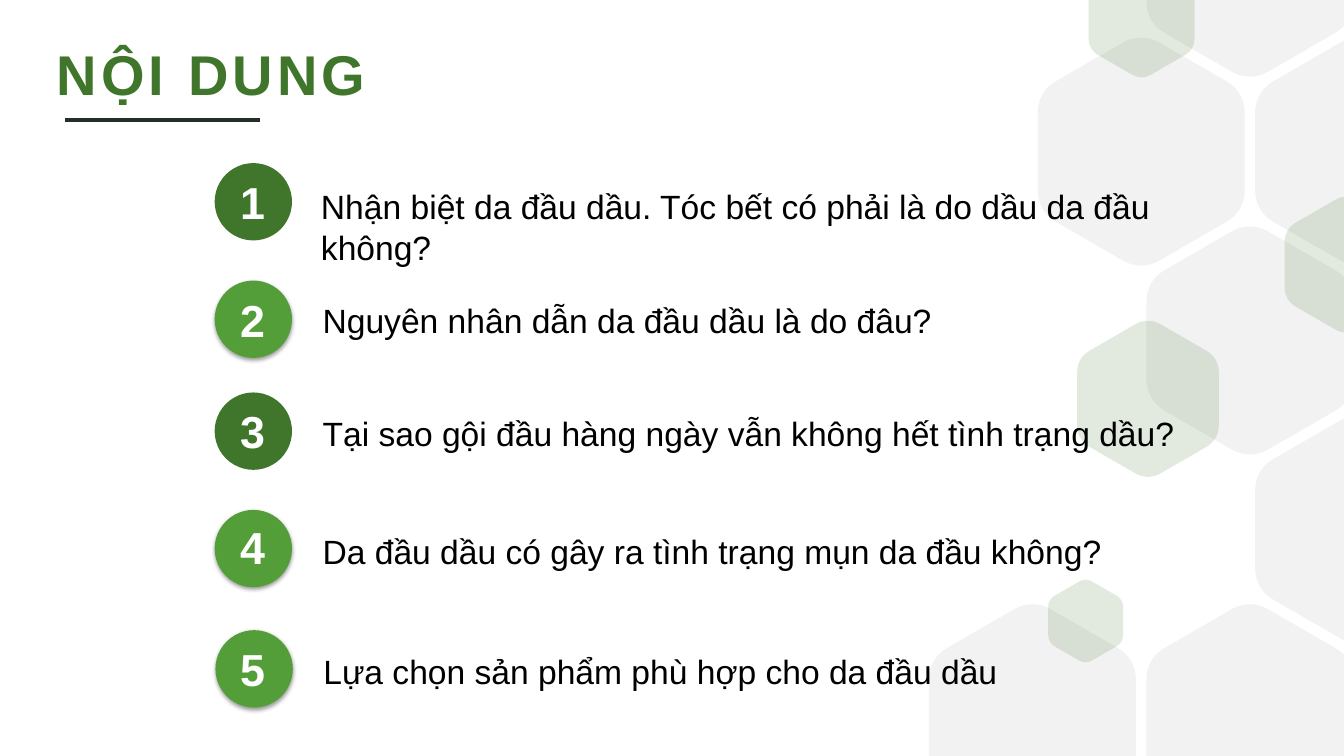
import math

import pptx
import pptx.dml.color
import pptx.enum.shapes
import pptx.enum.text
import pptx.oxml
import pptx.oxml.ns
import pptx.util

Cm = pptx.util.Cm
Pt = pptx.util.Pt
RGBColor = pptx.dml.color.RGBColor
qn = pptx.oxml.ns.qn

DARK_GREEN = RGBColor(0x3F, 0x76, 0x2B)
GREEN = RGBColor(0x54, 0x9E, 0x39)
SLATE = RGBColor(0x22, 0x30, 0x28)
GREY = RGBColor(0xF2, 0xF2, 0xF2)
WHITE = RGBColor(0xFF, 0xFF, 0xFF)
BLACK = RGBColor(0x00, 0x00, 0x00)

WIDTH, HEIGHT = 33.87, 19.05
CORNER = [(0.17, 1.06), (0.06, 1.12), (-0.06, 1.12), (-0.17, 1.06)]
DRAWING_NS = "http://schemas.openxmlformats.org/drawingml/2006/main"

GREY_CELLS = [(0, 4), (2, 4), (3, 1), (2, 0), (2, 2), (1, 1), (3, 3)]
GREEN_HEXAGONS = [
    (33.93, 6.67, 1.55),
    (27.36, 15.65, 0.94),
    (28.77, 0.48, 1.33),
    (28.93, 10.05, 1.78),
]
AGENDA = [
    ("Nhận biệt da đầu dầu. Tóc bết có phải là do dầu da đầu không?",
     5.41, 4.11, DARK_GREEN, 4.27, 7.84, 4.57, 2.31, None),
    ("Nguyên nhân dẫn da đầu dầu là do đâu?",
     5.41, 7.07, GREEN, 7.24, 7.88, 7.43, 1.27, None),
    ("Tại sao gội đầu hàng ngày vẫn không hết tình trạng dầu?",
     5.41, 9.89, DARK_GREEN, 10.06, 7.88, 10.29, 1.27, None),
    ("Da đầu dầu có gây ra tình trạng mụn da đầu không?",
     5.41, 12.85, GREEN, 12.98, 7.88, 12.94, 1.45, 1.3),
    ("Lựa chọn sản phẩm phù hợp cho da đầu dầu",
     5.43, 15.88, GREEN, 16.05, 7.9, 15.98, 1.45, 1.3),
]


def hexagon_corners(center_x, center_y, radius):
    """Return the Bezier points of each rounded corner, clockwise from the bottom."""
    corners = []
    for index in range(6):
        cosine, sine = math.cos(index * math.pi / 3), math.sin(index * math.pi / 3)
        corners.append([(center_x + radius * (x * cosine - y * sine),
                         center_y + radius * (x * sine + y * cosine)) for x, y in CORNER])
    return corners


class SlideBuilder:
    """Hold the font and the current slide, and add its elements."""

    def __init__(self, slide, font_name):
        self.shapes = slide.shapes
        self.font_name = font_name

    def paint(self, shape, color):
        shape.shadow.inherit = False
        shape.fill.solid()
        shape.fill.fore_color.rgb = color
        shape.line.fill.background()

    def hexagon(self, center_x, center_y, radius, color, opacity=None):
        corners = hexagon_corners(center_x, center_y, radius)
        inside = [all(0 <= y <= HEIGHT for x, y in corner) for corner in corners]
        first = next((i for i in range(6) if inside[i] and not inside[i - 1]), 0)
        order = [(first + i) % 6 for i in range(6)]
        points = [point for i in order if inside[i] for point in corners[i]]
        cut = not all(inside)
        if cut:
            edge = 0 if center_y < HEIGHT / 2 else HEIGHT
            points = [(points[0][0], edge), *points, (points[-1][0], edge)]
        points = [(Cm(x), Cm(y)) for x, y in points]
        builder = self.shapes.build_freeform(*points[0])
        builder.add_line_segments(points[1:], close=True)
        shape = builder.convert_to_shape()
        self.round_corners(shape, int(cut), sum(inside))
        self.paint(shape, color)
        if opacity:
            color_element = shape._element.spPr.find(qn("a:solidFill"))[0]
            color_element.append(pptx.oxml.parse_xml(
                f'<a:alpha xmlns:a="{DRAWING_NS}" val="{opacity * 1000}"/>'))

    def round_corners(self, shape, start, count):
        segments = list(shape._element.iter(qn("a:lnTo")))
        for index in range(start, start + 4 * count, 4):
            curve = pptx.oxml.parse_xml(f'<a:cubicBezTo xmlns:a="{DRAWING_NS}"/>')
            segments[index].addprevious(curve)
            for segment in segments[index:index + 3]:
                curve.append(segment[0])
                segment.getparent().remove(segment)

    def text(self, text, left, top, width, height, size, color, bold=False,
             spacing=None, line_spacing=None):
        box = self.shapes.add_textbox(Cm(left), Cm(top), Cm(width), Cm(height))
        text_frame = box.text_frame
        text_frame.word_wrap = True
        text_frame.auto_size = pptx.enum.text.MSO_AUTO_SIZE.SHAPE_TO_FIT_TEXT
        text_frame.text = text
        paragraph = text_frame.paragraphs[0]
        font = paragraph.runs[0].font
        font.name = self.font_name
        font.size = Pt(size)
        font.bold = bold
        font.color.rgb = color
        if line_spacing:
            paragraph.line_spacing = line_spacing
        if spacing:
            font._element.set("spc", str(spacing * 100))

    def rule(self, left, right, top, color, weight):
        connector = self.shapes.add_connector(
            pptx.enum.shapes.MSO_CONNECTOR.STRAIGHT, Cm(left), Cm(top), Cm(right), Cm(top))
        connector.line.color.rgb = color
        connector.line.width = Pt(weight)
        connector._element.spPr.append(
            pptx.oxml.parse_xml(f'<a:effectLst xmlns:a="{DRAWING_NS}"/>'))

    def disc(self, left, top, color, shadow):
        shape = self.shapes.add_shape(
            pptx.enum.shapes.MSO_SHAPE.OVAL, Cm(left), Cm(top), Cm(1.95), Cm(1.95))
        self.paint(shape, color)
        if shadow:
            shape._element.spPr.find(qn("a:effectLst")).append(pptx.oxml.parse_xml(
                f'<a:outerShdw xmlns:a="{DRAWING_NS}" blurRad="40000" dist="20000" '
                'dir="5400000" rotWithShape="0"><a:srgbClr val="000000">'
                '<a:alpha val="38000"/></a:srgbClr></a:outerShdw>'))


def main():
    presentation = pptx.Presentation()
    presentation.slide_width = Cm(WIDTH)
    presentation.slide_height = Cm(HEIGHT)
    slide = presentation.slides.add_slide(presentation.slide_layouts[6])
    builder = SlideBuilder(slide, "Arial")

    for column, row in GREY_CELLS:
        builder.hexagon(26.02 + 2.74 * column, -0.94 + 4.76 * row, 2.6, GREY)
    for center_x, center_y, radius in GREEN_HEXAGONS:
        builder.hexagon(center_x, center_y, radius, DARK_GREEN, opacity=15)

    builder.text("NỘI DUNG", 1.18, 0.86, 21.92, 1.96, 40, DARK_GREEN, bold=True, spacing=3)
    builder.rule(1.65, 6.55, 3.03, SLATE, 3)

    for number, item in enumerate(AGENDA, start=1):
        text, disc_left, disc_top, color, number_top, left, top, height, line_spacing = item
        builder.disc(disc_left, disc_top, color, shadow=color == GREEN)
        builder.text(str(number), 5.81, number_top, 1.4, 1.63, 32, WHITE, bold=True)
        builder.text(text, left, top, 22.33, height, 24, BLACK, line_spacing=line_spacing)

    presentation.save("out.pptx")


if __name__ == "__main__":
    main()
